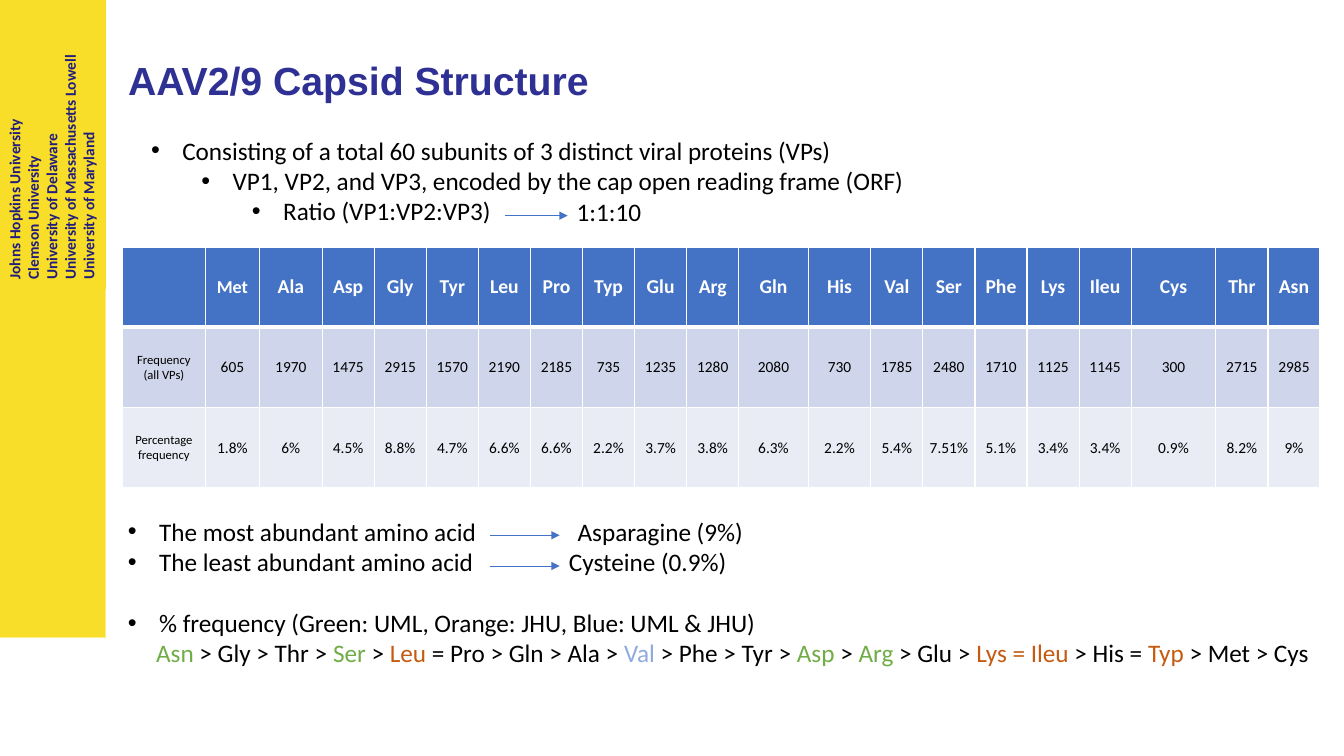
from dataclasses import dataclass

from lxml.etree import SubElement
from pptx import Presentation
from pptx.dml.color import RGBColor
from pptx.enum.shapes import MSO_CONNECTOR, MSO_SHAPE
from pptx.enum.text import MSO_ANCHOR, PP_ALIGN
from pptx.oxml import parse_xml
from pptx.oxml.ns import nsdecls, qn
from pptx.util import Inches, Pt


@dataclass(frozen=True)
class Theme:
    """Colours, fonts and type sizes of the slide."""

    yellow: str = "F8DE28"
    edge: str = "FBEC85"
    navy: str = "211D7D"
    title: str = "2E3093"
    ink: str = "000000"
    white: str = "FFFFFF"
    blue: str = "4472C4"
    frequency_band: str = "CFD5EA"
    percentage_band: str = "E9EBF5"
    green: str = "70AD47"
    orange: str = "C55A11"
    pale_blue: str = "8FAADC"
    heading_font: str = "Arial"
    body_font: str = "Calibri"
    title_size: float = 28
    body_size: float = 18
    header_size: float = 14
    small_header_size: float = 13
    value_size: float = 11
    label_size: float = 9


class CapsidSlide:
    """Draws elements on one slide, with places in percent of its size."""

    def __init__(self, presentation, theme):
        """Add a title-only slide to the presentation."""
        self.presentation = presentation
        self.theme = theme
        self.slide = presentation.slides.add_slide(presentation.slide_layouts[5])

    def place(self, left, top, width, height):
        """Turn percentages into slide lengths."""
        across, down = self.presentation.slide_width, self.presentation.slide_height
        return [round(share * side / 100) for share, side in
                zip((left, top, width, height), (across, down, across, down))]

    def style(self, paragraph, size, color, bold=False, font=None):
        """Set the font of a whole paragraph."""
        paragraph.font.name = font or self.theme.body_font
        paragraph.font.size = Pt(size)
        paragraph.font.bold = bold
        paragraph.font.color.rgb = RGBColor.from_string(color)

    def title(self, text, *box):
        """Fill and format the title placeholder."""
        title = self.slide.shapes.title
        title.left, title.top, title.width, title.height = self.place(*box)
        title.text_frame.text = text
        title.text_frame.vertical_anchor = MSO_ANCHOR.MIDDLE
        paragraph = title.text_frame.paragraphs[0]
        paragraph.alignment = PP_ALIGN.LEFT
        paragraph.line_spacing = 0.9
        self.style(paragraph, self.theme.title_size, self.theme.title, True, self.theme.heading_font)

    def panel(self, *box, edge=None):
        """Add a yellow rectangle."""
        panel = self.slide.shapes.add_shape(MSO_SHAPE.RECTANGLE, *self.place(*box))
        panel.shadow.inherit = False
        panel.fill.solid()
        panel.fill.fore_color.rgb = RGBColor.from_string(self.theme.yellow)
        if edge:
            panel.line.color.rgb = RGBColor.from_string(edge)
            panel.line.width = Pt(0.75)
        else:
            panel.line.fill.background()
        return panel

    def upright_names(self, names, *box):
        """Add a panel of names that read from bottom to top."""
        panel = self.panel(*box)
        left, top, width, height = self.place(*box)
        panel.left, panel.top = left + (width - height) // 2, top + (height - width) // 2
        panel.width, panel.height = height, width
        panel.rotation = 270
        frame = panel.text_frame
        frame.word_wrap = True
        frame.vertical_anchor = MSO_ANCHOR.TOP
        frame.text = "\n".join(names)
        for paragraph in frame.paragraphs:
            paragraph.alignment = PP_ALIGN.LEFT
            self.style(paragraph, self.theme.value_size, self.theme.navy, True)

    def text(self, paragraphs, *box):
        """Add a text box of (runs, level, indent, space before) paragraphs."""
        frame = self.slide.shapes.add_textbox(*self.place(*box)).text_frame
        frame.word_wrap = True
        for index, (runs, level, indent, space) in enumerate(paragraphs):
            paragraph = frame.add_paragraph() if index else frame.paragraphs[0]
            properties = paragraph._p.get_or_add_pPr()
            properties.set("marL", str(Inches(indent)))
            properties.set("indent", "0")
            if level is not None:
                paragraph.level = level
                properties.set("marL", str(Inches(0.31 + 0.5 * level)))
                properties.set("indent", str(Inches(-0.31)))
                SubElement(properties, qn("a:buFont")).set("typeface", self.theme.heading_font)
                SubElement(properties, qn("a:buChar")).set("char", "•")
            if space:
                paragraph.space_before = Pt(space)
            self.style(paragraph, self.theme.body_size, self.theme.ink)
            for words, color in runs:
                run = paragraph.add_run()
                run.text = words
                if color:
                    run.font.color.rgb = RGBColor.from_string(color)

    def bullets(self, lines, *box):
        """Add a text box of bulleted (text, level, space before) lines."""
        self.text([([(words, None)], level, 0, space) for words, level, space in lines], *box)

    def arrow(self, start, end, top):
        """Add a thin horizontal arrow."""
        left, y, right, _ = self.place(start, top, end, top)
        connector = self.slide.shapes.add_connector(MSO_CONNECTOR.STRAIGHT, left, y, right, y)
        connector.line.color.rgb = RGBColor.from_string(self.theme.blue)
        connector.line.width = Pt(0.5)
        SubElement(connector.line._get_or_add_ln(), qn("a:tailEnd")).set("type", "triangle")
        SubElement(connector._element.spPr, qn("a:effectLst"))

    def answer(self, words, left, top):
        """Add the short text that an arrow points to."""
        self.text([([(words, None)], None, 0, 0)], left, top, 20, 5.33)

    def cell(self, cell, words, fill, size, color, bold, top, bottom):
        """Fill and format one table cell with white borders."""
        cell.fill.solid()
        cell.fill.fore_color.rgb = RGBColor.from_string(fill)
        cell.vertical_anchor = MSO_ANCHOR.MIDDLE
        cell.margin_left = cell.margin_right = cell.margin_top = cell.margin_bottom = Inches(0.01)
        cell.text_frame.text = words
        for paragraph in cell.text_frame.paragraphs:
            paragraph.alignment = PP_ALIGN.CENTER
            self.style(paragraph, size, color, bold)
        properties = cell._tc.get_or_add_tcPr()
        for index, (side, width) in enumerate((("L", 1), ("R", 1), ("T", top), ("B", bottom))):
            properties.insert(index, parse_xml(
                f'<a:ln{side} {nsdecls("a")} w="{Pt(width)}"><a:solidFill>'
                f'<a:srgbClr val="{self.theme.white}"/></a:solidFill></a:ln{side}>'))

    def table(self, rows, wide_columns, *box):
        """Add the table, sharing the width left by wide columns equally."""
        theme = self.theme
        left, top, width, height = self.place(*box)
        count = len(rows[0])
        table = self.slide.shapes.add_table(len(rows), count, left, top, width, height).table
        table.horz_banding = False
        wide = {name: Inches(inches) for name, inches in wide_columns.items()}
        narrow = (width - sum(wide.values())) // (count - len(wide))
        for column, name in zip(table.columns, rows[0]):
            column.width = wide.get(name, narrow)
        fills = (theme.blue, theme.frequency_band, theme.percentage_band)
        for i, (row, fill) in enumerate(zip(rows, fills)):
            for j, words in enumerate(row):
                if i == 0:
                    size = theme.small_header_size if j == 1 else theme.header_size
                else:
                    size = theme.value_size if j else theme.label_size
                color = theme.ink if i else theme.white
                self.cell(table.cell(i, j), words, fill, size, color, i == 0,
                          3 if i == 1 else 1, 3 if i == 0 else 1)


def main():
    """Build and save the slide."""
    presentation = Presentation()
    presentation.slide_width, presentation.slide_height = Inches(13.33), Inches(7.5)
    theme = Theme()
    page = CapsidSlide(presentation, theme)

    page.panel(0, 0, 7.88, 84.4, edge=theme.edge)
    page.upright_names(["Johns Hopkins University", "Clemson University", "University of Delaware",
                        "University of Massachusetts Lowell", "University of Maryland"], 0, 0, 7.88, 38.27)
    page.title("AAV2/9 Capsid Structure", 8.78, 4.8, 86.27, 12.4)
    page.bullets([("Consisting of a total 60 subunits of 3 distinct viral proteins (VPs)", 0, 0),
                  ("VP1, VP2, and VP3, encoded by the cap open reading frame (ORF)", 1, 0),
                  ("Ratio (VP1:VP2:VP3)", 2, 0)], 10.5, 17.2, 86.27, 13.47)
    page.arrow(37.58, 42.24, 28.53)
    page.answer("1:1:10", 42.16, 25.33)

    residues = "Met Ala Asp Gly Tyr Leu Pro Typ Glu Arg Gln His Val Ser Phe Lys Ileu Cys Thr Asn"
    frequencies = ("605 1970 1475 2915 1570 2190 2185 735 1235 1280 "
                   "2080 730 1785 2480 1710 1125 1145 300 2715 2985")
    percentages = ("1.8% 6% 4.5% 8.8% 4.7% 6.6% 6.6% 2.2% 3.7% 3.8% "
                   "6.3% 2.2% 5.4% 7.51% 5.1% 3.4% 3.4% 0.9% 8.2% 9%")
    rows = [["", *residues.split()], ["Frequency\n(all VPs)", *frequencies.split()],
            ["Percentage frequency", *percentages.split()]]
    wide_columns = {"": 0.82, "Met": 0.54, "Ala": 0.62, "Gln": 0.69, "His": 0.62, "Cys": 0.84}
    page.table(rows, wide_columns, 9.12, 32.67, 89.12, 31.87)

    ranking = [("Asn", theme.green), (" > Gly > Thr > ", None), ("Ser", theme.green), (" > ", None),
               ("Leu", theme.orange), (" = Pro > Gln > Ala > ", None), ("Val", theme.pale_blue),
               (" > Phe > Tyr > ", None), ("Asp", theme.green), (" > ", None), ("Arg", theme.green),
               (" > Glu > ", None), ("Lys = Ileu", theme.orange), (" > His = ", None),
               ("Typ", theme.orange), (" > Met > Cys", None)]
    page.text([([("The most abundant amino acid", None)], 0, 0, 0),
               ([("The least abundant amino acid", None)], 0, 0, 0),
               ([("% frequency (Green: UML, Orange: JHU, Blue: UML & JHU)", None)], 0, 0, 22),
               (ranking, None, 0.28, 0)], 8.78, 67.6, 90.62, 25.6)
    for words, left, top in (("Asparagine (9%)", 42.24, 67.6), ("Cysteine (0.9%)", 41.6, 71.67)):
        page.arrow(36.46, 41.64, top + 3.2)
        page.answer(words, left, top)
    presentation.save("out.pptx")


if __name__ == "__main__":
    main()
